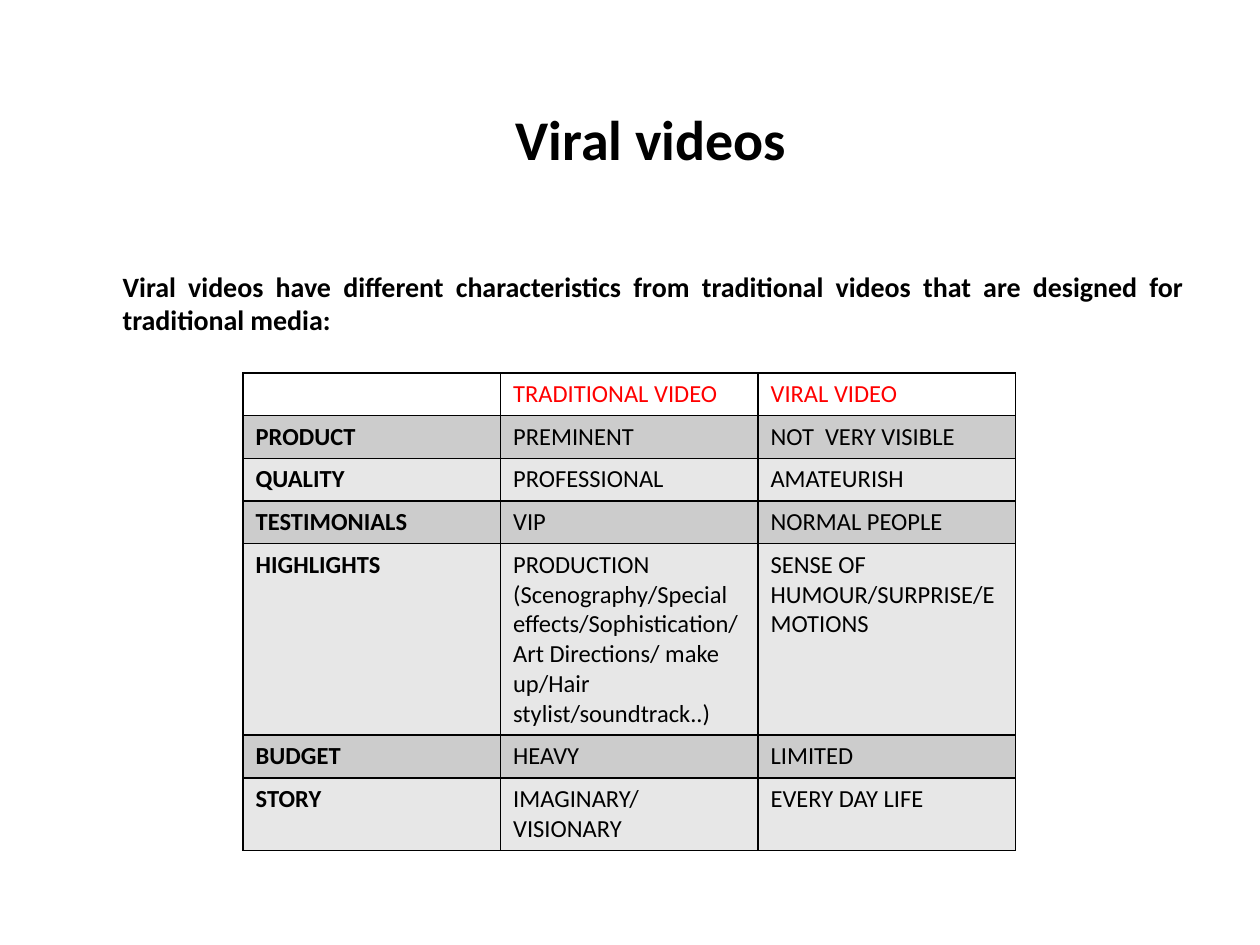
from lxml.etree import SubElement as Sub
from pptx import Presentation
from pptx.dml.color import RGBColor
from pptx.enum.text import MSO_ANCHOR as Anchor, MSO_AUTO_SIZE as Auto, PP_ALIGN as Align
from pptx.oxml.ns import qn
from pptx.util import Cm, Pt

BLACK = RGBColor(0, 0, 0)
WHITE = RGBColor(255, 255, 255)
RED = RGBColor(255, 0, 0)
DARK = RGBColor(0xCC, 0xCC, 0xCC)
LIGHT = RGBColor(0xE7, 0xE7, 0xE7)
FACE = "Calibri"

# Row height in cm, then the cells
ROWS = [
    (0.86, "", "TRADITIONAL VIDEO", "VIRAL VIDEO"),
    (0.86, "PRODUCT", "PREMINENT", "NOT  VERY VISIBLE"),
    (0.86, "QUALITY", "PROFESSIONAL", "AMATEURISH"),
    (0.86, "TESTIMONIALS", "VIP", "NORMAL PEOPLE"),
    (3.86, "HIGHLIGHTS",
     "PRODUCTION (Scenography/Special effects/Sophistication/"
     "Art Directions/ make up/Hair stylist/soundtrack..)",
     "SENSE OF HUMOUR/SURPRISE/EMOTIONS"),
    (0.86, "BUDGET", "HEAVY", "LIMITED"),
    (1.46, "STORY", "IMAGINARY/VISIONARY", "EVERY DAY LIFE"),
]


def style(para, size, color=BLACK, bold=False):
    font = para.font
    font.name, font.size, font.bold = FACE, Pt(size), bold
    font.color.rgb = color


def place(shape, box):
    shape.left, shape.top, shape.width, shape.height = box


def add_title(slide, box):
    title = slide.shapes.title
    place(title, box)
    frame = title.text_frame
    frame.text = "Viral videos"
    frame.auto_size = Auto.NONE
    frame.vertical_anchor = Anchor.MIDDLE
    para = frame.paragraphs[0]
    para.alignment = Align.CENTER
    style(para, 32, bold=True)


def add_intro(slide, box):
    body = slide.placeholders[1]
    place(body, box)
    frame = body.text_frame
    frame.text = ("Viral videos have different characteristics from traditional "
                  "videos that are designed for traditional media:")
    frame.auto_size = Auto.NONE
    frame.margin_top = Cm(0.98)
    para = frame.paragraphs[0]
    para.alignment = Align.JUSTIFY
    para.space_before = Pt(0)
    style(para, 16, bold=True)
    props = para._p.get_or_add_pPr()
    props.set("marL", str(Cm(0.95)))
    props.set("indent", "0")
    Sub(props, qn("a:buNone")) if props.find(qn("a:defRPr")) is None else \
        props.find(qn("a:defRPr")).addprevious(Sub(props, qn("a:buNone")))


def add_edges(cell):
    props = cell._tc.get_or_add_tcPr()
    for side in ("lnL", "lnR", "lnT", "lnB"):
        line = Sub(props, qn(f"a:{side}"), w=str(Pt(1)))
        Sub(Sub(line, qn("a:solidFill")), qn("a:srgbClr"), val=str(BLACK))


def add_grid(slide, box):
    """Add the table that compares traditional and viral videos."""
    table = slide.shapes.add_table(len(ROWS), 3, *box).table
    table.first_row = table.horz_banding = False
    for r, (height, *texts) in enumerate(ROWS):
        table.rows[r].height = Cm(height)
        fill = WHITE if r == 0 else DARK if r % 2 else LIGHT
        for c, text in enumerate(texts):
            cell = table.cell(r, c)
            cell.text = text
            style(cell.text_frame.paragraphs[0], 14,
                  BLACK if r else RED, bold=c == 0)
            add_edges(cell)
            cell.fill.solid()
            cell.fill.fore_color.rgb = fill


def main():
    deck = Presentation()
    deck.slide_width, deck.slide_height = Cm(25.4), Cm(19.05)
    slide = deck.slides.add_slide(deck.slide_layouts[1])
    add_intro(slide, (Cm(1.27), Cm(4.45), Cm(22.86), Cm(12.57)))
    add_title(slide, (Cm(1.7), Cm(1.2), Cm(22.86), Cm(3.18)))
    add_grid(slide, (Cm(4.9), Cm(7.52), Cm(15.57), Cm(9.62)))
    deck.save("out.pptx")


if __name__ == "__main__":
    main()
